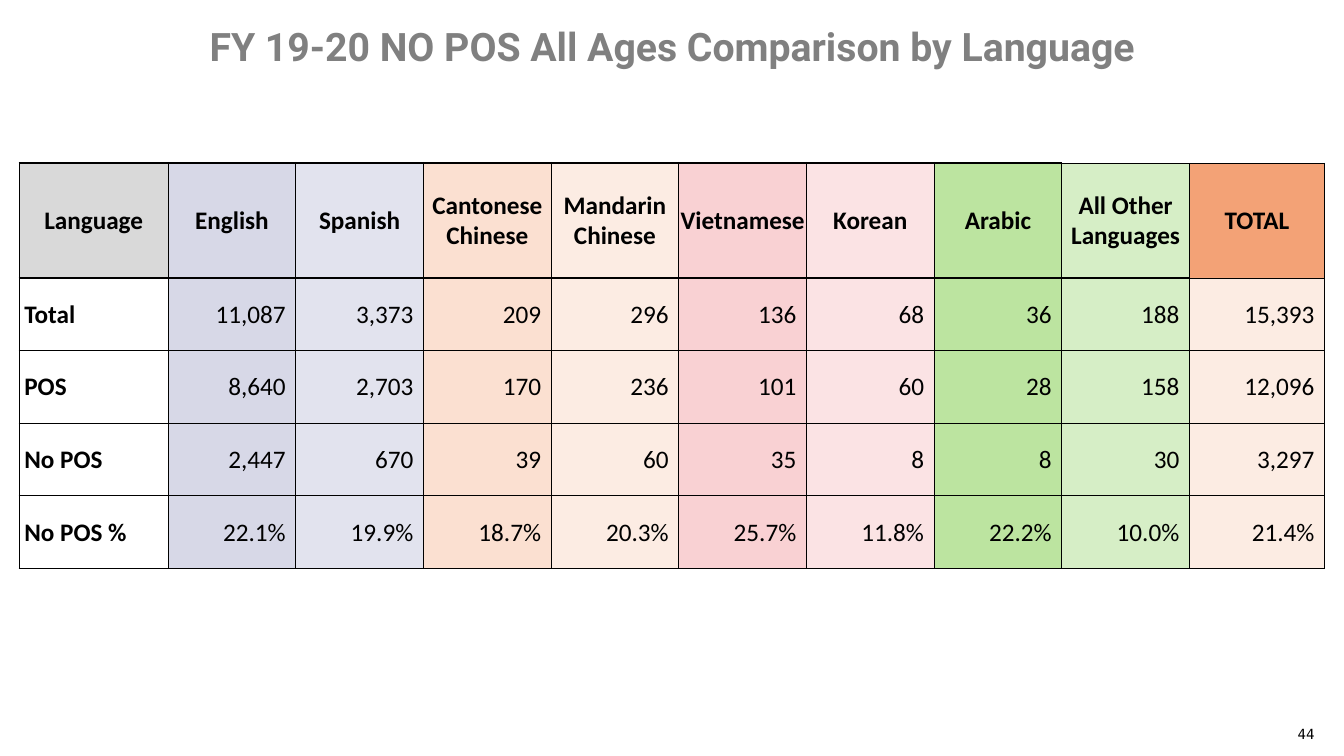
import pptx
import pptx.dml.color
import pptx.enum.text
import pptx.oxml.ns
import pptx.util
from lxml import etree

Pt = pptx.util.Pt
ALIGN = pptx.enum.text.PP_ALIGN
ANCHOR = pptx.enum.text.MSO_ANCHOR

# Column: heading, header colour, body colour, body opacity in percent
COLUMNS = [
    ("Language", "D9D9D9", "FFFFFF", 100),
    ("English", "D7D8E7", "D7D8E7", 100),
    ("Spanish", "D7D8E7", "D7D8E7", 70),
    ("Cantonese\nChinese", "FBE0D1", "FBE0D1", 100),
    ("Mandarin\nChinese", "FBE0D1", "FBE0D1", 60),
    ("Vietnamese", "F9D1D3", "F9D1D3", 100),
    ("Korean", "F9D1D3", "F9D1D3", 60),
    ("Arabic", "BCE4A0", "BCE4A0", 100),
    ("All Other\nLanguages", "BCE4A0", "BCE4A0", 60),
    ("TOTAL", "F3A276", "FBE0D1", 60),
]
ROWS = [
    ["Total", "11,087", "3,373", "209", "296", "136", "68", "36", "188", "15,393"],
    ["POS", "8,640", "2,703", "170", "236", "101", "60", "28", "158", "12,096"],
    ["No POS", "2,447", "670", "39", "60", "35", "8", "8", "30", "3,297"],
    ["No POS %", "22.1%", "19.9%", "18.7%", "20.3%", "25.7%", "11.8%", "22.2%", "10.0%", "21.4%"],
]
LAST = len(COLUMNS) - 1
# Widths of the vertical lines, from the left edge to the right edge
VERTICAL_LINES = [1, 0.5, 0.5, 1, 0.5, 0.5, 1, 1, 1, 1, 1]

TITLE_FONT = {"name": "Roboto", "size": Pt(28), "bold": True}
NUMBER_FONT = {"name": "DejaVu Sans Mono", "size": Pt(10), "bold": False}
LABEL_FONT = {"name": "Calibri", "size": Pt(18), "bold": True}
VALUE_FONT = {**LABEL_FONT, "bold": False}


def color(hex_string):
    return pptx.dml.color.RGBColor.from_string(hex_string)


def set_values(target, values):
    for name, value in values.items():
        setattr(target, name, value)


def format_text(text_frame, text, font, hex_string, alignment):
    text_frame.text = text
    for paragraph in text_frame.paragraphs:
        paragraph.alignment = alignment
        for run in paragraph.runs:
            set_values(run.font, font)
            run.font.color.rgb = color(hex_string)


def place(shape, box):
    set_values(shape, dict(zip(("left", "top", "width", "height"), map(Pt, box))))


def set_borders(cell, widths):
    properties = cell._tc.get_or_add_tcPr()
    for side in "LRTB":
        line = etree.SubElement(properties, pptx.oxml.ns.qn("a:ln" + side), w=str(Pt(widths[side])))
        fill = etree.SubElement(line, pptx.oxml.ns.qn("a:solidFill"))
        etree.SubElement(fill, pptx.oxml.ns.qn("a:srgbClr"), val="000000")


def fill_cell(cell, hex_string, opacity):
    cell.fill.solid()
    cell.fill.fore_color.rgb = color(hex_string)
    if opacity < 100:
        fill_color = cell._tc.tcPr.find(".//" + pptx.oxml.ns.qn("a:solidFill") + "[last()]")
        fill_color = cell._tc.tcPr.find(pptx.oxml.ns.qn("a:solidFill"))[0]
        etree.SubElement(fill_color, pptx.oxml.ns.qn("a:alpha"), val=str(opacity * 1000))


def horizontal_line(boundary, column):
    """Width of the line above the row with the index boundary."""
    thick_columns = {0: LAST - 1, 1: LAST}
    return 2 if column < thick_columns.get(boundary, 0) else 0.5


def add_title(slide, box):
    title = slide.shapes.title
    place(title, box)
    set_values(title.text_frame, {"word_wrap": True, "vertical_anchor": ANCHOR.MIDDLE})
    format_text(title.text_frame, "FY 19-20 NO POS All Ages Comparison by Language",
                TITLE_FONT, "808080", ALIGN.CENTER)


def add_language_table(slide, box):
    left, top, width, height = box
    table = slide.shapes.add_table(len(ROWS) + 1, len(COLUMNS), *map(Pt, box)).table
    set_values(table, {"first_row": False, "horz_banding": False})

    # Column widths and row heights
    label_width, total_width, header_height = 106.3, 96.5, 82
    language_width = (width - label_width - total_width) / (LAST - 1)
    for index, column in enumerate(table.columns):
        column.width = Pt({0: label_width, LAST: total_width}.get(index, language_width))
    for index, row in enumerate(table.rows):
        row.height = Pt((height - header_height) / len(ROWS) if index else header_height)

    # Cells
    for row, texts in enumerate([[column[0] for column in COLUMNS]] + ROWS):
        for column, text in enumerate(texts):
            heading, header_color, body_color, opacity = COLUMNS[column]
            is_header, is_label = row == 0, column == 0
            cell = table.cell(row, column)
            set_borders(cell, {
                "L": VERTICAL_LINES[column], "R": VERTICAL_LINES[column + 1],
                "T": horizontal_line(row, column), "B": horizontal_line(row + 1, column),
            })
            if is_header:
                fill_cell(cell, header_color, 100 if column == LAST else opacity)
                alignment = ALIGN.CENTER
            else:
                fill_cell(cell, body_color, opacity)
                alignment = ALIGN.LEFT if is_label else ALIGN.RIGHT
            set_values(cell, {
                "vertical_anchor": ANCHOR.MIDDLE,
                "margin_left": Pt(3.6 if alignment == ALIGN.LEFT else 0.7),
                "margin_right": Pt(7.2 if alignment == ALIGN.RIGHT else 0.7),
                "margin_top": Pt(0.7), "margin_bottom": 0,
            })
            font = LABEL_FONT if is_header or is_label else VALUE_FONT
            format_text(cell.text_frame, text, font, "000000", alignment)


def add_page_number(slide, box):
    text_frame = slide.shapes.add_textbox(*map(Pt, box)).text_frame
    set_values(text_frame, {"word_wrap": True, "vertical_anchor": ANCHOR.BOTTOM})
    format_text(text_frame, "44", NUMBER_FONT, "000000", ALIGN.RIGHT)


def main():
    presentation = pptx.Presentation()
    set_values(presentation, {"slide_width": Pt(960), "slide_height": Pt(540)})
    title_only = presentation.slide_layouts[5]
    slide = presentation.slides.add_slide(title_only)
    add_title(slide, (0, 0, 960, 65))
    add_language_table(slide, (13.8, 116.5, 932.4, 289.6))
    add_page_number(slide, (908, 504.5, 38, 29))
    presentation.save("out.pptx")


if __name__ == "__main__":
    main()
